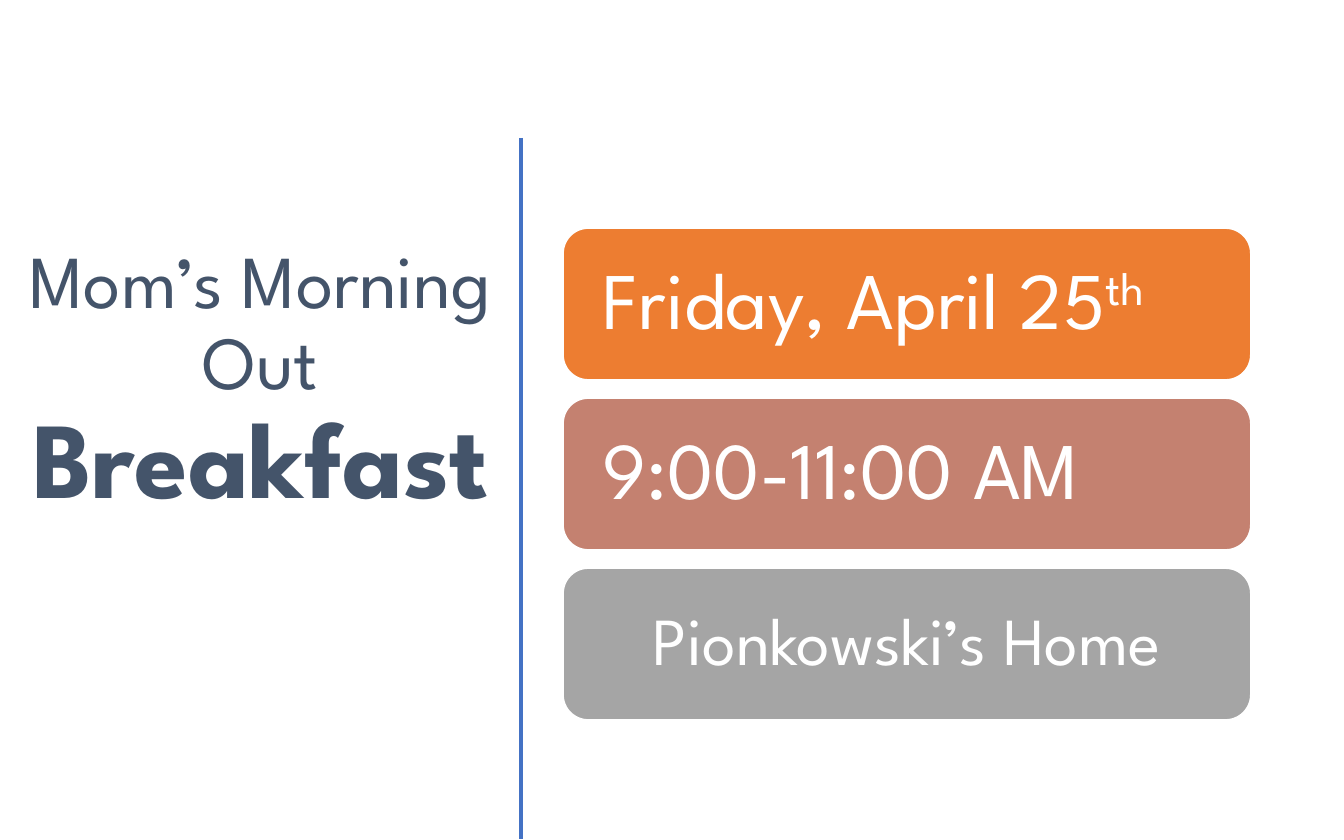
import pptx
import pptx.dml.color
import pptx.enum.shapes
import pptx.enum.text
import pptx.oxml.ns
import pptx.util
import lxml.etree

SCALE = 914400 / 134.4
COLORS = {
    "white": "FFFFFF",
    "slate": "44546A",
    "blue": "4472C4",
    "orange": "ED7D31",
    "rose": "C48170",
    "gray": "A5A5A5",
}
ALIGN = pptx.enum.text.PP_ALIGN
ANCHOR = pptx.enum.text.MSO_ANCHOR


def px(length):
    return pptx.util.Emu(round(length * SCALE))


def color(name):
    return pptx.dml.color.RGBColor.from_string(COLORS[name])


class Invitation:
    font_name = "League Spartan"
    line_spacing = 0.9

    def __init__(self, deck):
        self.page = deck.slides.add_slide(deck.slide_layouts[6])

    def format_frame(self, frame, insets, anchor):
        left, top, right, bottom = map(px, insets)
        values = {
            "word_wrap": True,
            "vertical_anchor": anchor,
            "margin_left": left,
            "margin_top": top,
            "margin_right": right,
            "margin_bottom": bottom,
        }
        for key, value in values.items():
            setattr(frame, key, value)

    def add_text(self, para, text, size, ink, align, bold=False, raised=""):
        para.alignment = align
        para.line_spacing = self.line_spacing
        values = {"name": self.font_name, "size": pptx.util.Pt(size), "bold": bold}
        for part in filter(None, (text, raised)):
            span = para.add_run()
            span.text = part
            for key, value in values.items():
                setattr(span.font, key, value)
            span.font.color.rgb = color(ink)
            if part == raised:
                span._r.get_or_add_rPr().set("baseline", "30000")

    def title(self, left, top, width, height, text_top, lines):
        box = self.page.shapes.add_textbox(px(left), px(top), px(width), px(height))
        frame = box.text_frame
        self.format_frame(frame, (13, text_top, 13, 7), ANCHOR.TOP)
        for index, (text, size, bold) in enumerate(lines):
            para = frame.add_paragraph() if index else frame.paragraphs[0]
            self.add_text(para, text, size, "slate", ALIGN.CENTER, bold)

    def divider(self, x, top, bottom):
        line = self.page.shapes.add_connector(
            pptx.enum.shapes.MSO_CONNECTOR.STRAIGHT, px(x), px(top), px(x), px(bottom)
        )
        line.line.color.rgb = color("blue")
        line.line.width = pptx.util.Pt(2)
        lxml.etree.SubElement(
            line._element.spPr, pptx.oxml.ns.qn("a:effectLst")
        )

    def card(self, left, top, width, height, fill, text, size, align, raised=""):
        box = self.page.shapes.add_shape(
            pptx.enum.shapes.MSO_SHAPE.ROUNDED_RECTANGLE,
            px(left), px(top), px(width), px(height),
        )
        box.shadow.inherit = False
        box.fill.solid()
        box.fill.fore_color.rgb = color(fill)
        box.line.color.rgb = color("white")
        box.line.width = pptx.util.Pt(1)
        self.format_frame(box.text_frame, (32, 28, 32, 28), ANCHOR.MIDDLE)
        para = box.text_frame.paragraphs[0]
        self.add_text(para, text, size, "white", align, raised=raised)


def main():
    deck = pptx.Presentation()
    deck.slide_width, deck.slide_height = px(1344), px(840)
    invitation = Invitation(deck)
    invitation.title(
        0, 0, 521, 814, 244,
        [("Mom’s Morning Out", 40, False), ("Breakfast", 58, True)],
    )
    invitation.divider(521, 138, 839)
    details = [
        ("orange", "Friday, April 25", 43, ALIGN.LEFT, "th"),
        ("rose", "9:00-11:00 AM", 43, ALIGN.LEFT),
        ("gray", "Pionkowski’s Home", 36, ALIGN.CENTER),
    ]
    for index, detail in enumerate(details):
        invitation.card(563, 228 + 170 * index, 688, 152, *detail)
    deck.save("out.pptx")


if __name__ == "__main__":
    main()
